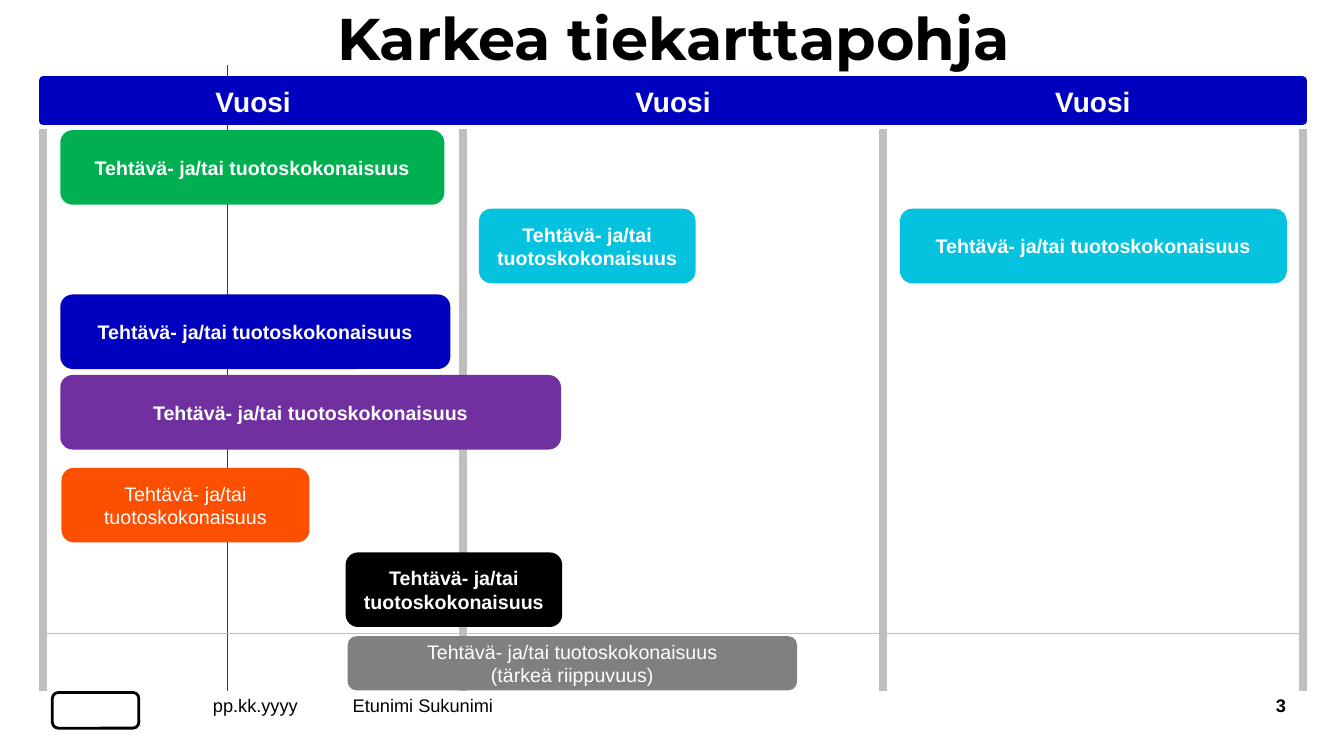
from lxml import etree
from pptx import Presentation
from pptx.dml.color import RGBColor
from pptx.enum.shapes import MSO_CONNECTOR, MSO_SHAPE
from pptx.enum.text import MSO_ANCHOR, PP_ALIGN
from pptx.oxml.ns import qn
from pptx.util import Cm, Pt

STRAIGHT = MSO_CONNECTOR.STRAIGHT
RECTANGLE, ROUNDED = MSO_SHAPE.RECTANGLE, MSO_SHAPE.ROUNDED_RECTANGLE
LEFT, CENTER, RIGHT = PP_ALIGN.LEFT, PP_ALIGN.CENTER, PP_ALIGN.RIGHT
TOP, MIDDLE = MSO_ANCHOR.TOP, MSO_ANCHOR.MIDDLE

BLACK = RGBColor(0x00, 0x00, 0x00)
WHITE = RGBColor(0xFF, 0xFF, 0xFF)
BLUE = RGBColor(0x00, 0x00, 0xBF)
GREEN = RGBColor(0x00, 0xB0, 0x50)
CYAN = RGBColor(0x05, 0xC3, 0xDE)
PURPLE = RGBColor(0x70, 0x30, 0xA0)
ORANGE = RGBColor(0xFD, 0x4F, 0x00)
GREY = RGBColor(0x80, 0x80, 0x80)
LIGHT_GREY = RGBColor(0xBF, 0xBF, 0xBF)
RED = RGBColor(0xC0, 0x00, 0x00)

TITLE = "Karkea tiekarttapohja"
YEARS = ["Vuosi", "Vuosi", "Vuosi"]
TASK = "Tehtävä- ja/tai tuotoskokonaisuus"
# Text, left, top, width, height (cm), colour, bold
TASKS = [
    (TASK, 1.52, 3.28, 9.68, 1.88, GREEN, True),
    (TASK, 12.07, 5.26, 5.46, 1.88, CYAN, True),
    (TASK, 22.68, 5.26, 9.75, 1.88, CYAN, True),
    (TASK, 1.52, 7.42, 9.83, 1.88, BLUE, True),
    (TASK, 1.52, 9.45, 12.62, 1.88, PURPLE, True),
    (TASK, 1.55, 11.79, 6.25, 1.88, ORANGE, False),
    (TASK, 8.71, 13.92, 5.46, 1.88, BLACK, True),
    (TASK + "\n(tärkeä riippuvuus)", 8.76, 16.03, 11.33, 1.37, GREY, False),
]
# Text, left, width (cm), alignment, bold
FOOTER = [
    ("pp.kk.yyyy", 4.62, 3.63, CENTER, False),
    ("Etunimi Sukunimi", 8.89, 11.43, LEFT, False),
    ("3", 28.98, 3.43, RIGHT, True),
]

CHART_LEFT, YEAR_WIDTH = 1.09, 10.58
CHART_RIGHT = CHART_LEFT + YEAR_WIDTH * len(YEARS)
BAND_TOP, BAND_HEIGHT = 2.03, 1.02
DIVIDER_TOP, CHART_BOTTOM = 3.24, 17.42
DEPENDENCY_Y = 15.95
TODAY_X, TODAY_TOP = 5.73, 1.65

prs = Presentation()
prs.slide_width, prs.slide_height = Cm(33.87), Cm(19.05)
slide = prs.slides.add_slide(prs.slide_layouts[5])
shapes = slide.shapes


def write(shape, text, size=14, color=WHITE, bold=False, font="Arial",
          align=CENTER, anchor=MIDDLE, spacing=1.0, inset=0):
    frame = shape.text_frame
    frame.word_wrap = True
    frame.vertical_anchor = anchor
    frame.margin_left = frame.margin_right = 0
    frame.margin_top = frame.margin_bottom = Cm(inset)
    frame.text = text
    for paragraph in frame.paragraphs:
        paragraph.alignment = align
        paragraph.line_spacing = spacing
        paragraph.font.size = Pt(size)
        paragraph.font.bold = bold
        paragraph.font.name = font
        paragraph.font.color.rgb = color


def add_box(kind, left, top, width, height, fill=None, line=None, weight=1):
    box = shapes.add_shape(kind, Cm(left), Cm(top), Cm(width), Cm(height))
    box.shadow.inherit = False
    for part, color in ((box.fill, fill), (box.line.fill, line)):
        if color is None:
            part.background()
        else:
            part.solid()
            part.fore_color.rgb = color
    if line is not None:
        box.line.width = Pt(weight)
    return box


def add_line(x1, y1, x2, y2, color, weight):
    line = shapes.add_connector(STRAIGHT, Cm(x1), Cm(y1), Cm(x2), Cm(y2))
    line.line.color.rgb = color
    line.line.width = Pt(weight)
    etree.SubElement(line._element.spPr, qn("a:effectLst"))


def add_label(text, left, top, width, height, **style):
    label = shapes.add_textbox(Cm(left), Cm(top), Cm(width), Cm(height))
    write(label, text, **style)


title = shapes.title
title.left, title.top = Cm(5.26), Cm(0.25)
title.width, title.height = Cm(23.42), Cm(1.9)
write(title, TITLE, size=42, color=BLACK, bold=True, font="Montserrat",
      anchor=TOP, spacing=0.9)

# Plain frame in the emblem's place
add_box(ROUNDED, 1.32, 17.45, 2.18, 0.9, line=BLACK, weight=2)

add_line(TODAY_X, TODAY_TOP, TODAY_X, CHART_BOTTOM, RED, 0.5)
for index in range(len(YEARS) + 1):
    x = CHART_LEFT + index * YEAR_WIDTH
    add_line(x, DIVIDER_TOP, x, CHART_BOTTOM, LIGHT_GREY, 6)

add_box(RECTANGLE, CHART_LEFT, BAND_TOP, CHART_RIGHT - CHART_LEFT, BAND_HEIGHT,
        fill=BLUE, line=BLUE, weight=6)
for index, year in enumerate(YEARS):
    add_label(year, CHART_LEFT + index * YEAR_WIDTH, BAND_TOP, YEAR_WIDTH, 1.07,
              size=20, bold=True)

add_line(CHART_LEFT, DEPENDENCY_Y, CHART_RIGHT, DEPENDENCY_Y, LIGHT_GREY, 0.5)
for text, left, top, width, height, color, bold in TASKS:
    task = add_box(ROUNDED, left, top, width, height, fill=color)
    write(task, text, bold=bold, inset=0.1)

for text, left, width, align, bold in FOOTER:
    add_label(text, left, CHART_BOTTOM, width, 0.71, size=13, color=BLACK,
              bold=bold, align=align)

prs.save("out.pptx")
